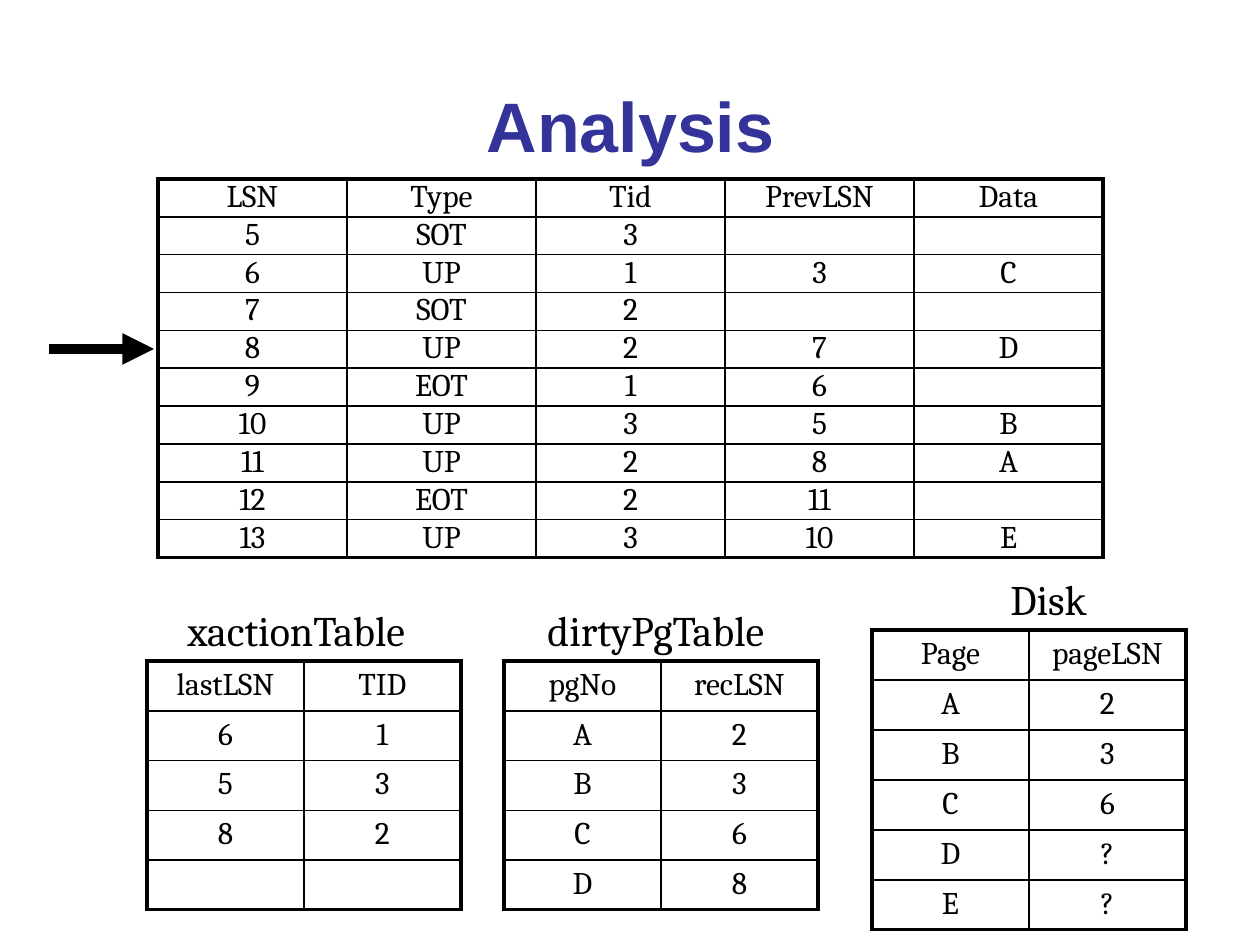
import lxml.etree
import pptx
import pptx.dml.color
import pptx.enum.shapes
import pptx.enum.text
import pptx.oxml
import pptx.oxml.ns
import pptx.util

SCALE = 914400 / 126
HUES = {"ink": "000000", "title": "333399", "paper": "FFFFFF"}
THICK, THIN = 2.25, 1
SERIF = "Cambria"

LOG = [
    ["LSN", "Type", "Tid", "PrevLSN", "Data"],
    ["5", "SOT", "3", "", ""],
    ["6", "UP", "1", "3", "C"],
    ["7", "SOT", "2", "", ""],
    ["8", "UP", "2", "7", "D"],
    ["9", "EOT", "1", "6", ""],
    ["10", "UP", "3", "5", "B"],
    ["11", "UP", "2", "8", "A"],
    ["12", "EOT", "2", "11", ""],
    ["13", "UP", "3", "10", "E"],
]
XACTS = [["lastLSN", "TID"], ["6", "1"], ["5", "3"], ["8", "2"], ["", ""]]
DIRTY = [["pgNo", "recLSN"], ["A", "2"], ["B", "3"], ["C", "6"], ["D", "8"]]
DISK = [["Page", "pageLSN"], ["A", "2"], ["B", "3"], ["C", "6"],
        ["D", "?"], ["E", "?"]]


def px(num):
    return pptx.util.Emu(round(num * SCALE))


def rgb(name):
    return pptx.dml.color.RGBColor.from_string(HUES[name])


def sub(node, tag, **attrs):
    return lxml.etree.SubElement(node, pptx.oxml.ns.qn(tag), **attrs)


def add_run(para, text, size, face=SERIF, hue="ink", bold=False):
    run = para.add_run()
    run.text = text
    run.font.size = pptx.util.Pt(size)
    run.font.name = face
    run.font.bold = bold
    run.font.color.rgb = rgb(hue)


def add_title(slide, text):
    box = slide.shapes.add_textbox(px(95), px(57), px(1071), px(136))
    frame = box.text_frame
    frame.word_wrap = True
    frame.vertical_anchor = pptx.enum.text.MSO_ANCHOR.MIDDLE
    para = frame.paragraphs[0]
    para.alignment = pptx.enum.text.PP_ALIGN.CENTER
    add_run(para, text, 40, "Arial", "title", True)


def add_label(slide, text, left, top, width):
    box = slide.shapes.add_textbox(px(left), px(top), px(width), px(63))
    box.text_frame.word_wrap = False
    add_run(box.text_frame.paragraphs[0], text, 24)


def add_arrow(slide, left, right, y):
    line = slide.shapes.add_connector(
        pptx.enum.shapes.MSO_CONNECTOR.STRAIGHT,
        px(left), px(y), px(right), px(y))
    line.line.width = pptx.util.Pt(6)
    line.line.color.rgb = rgb("ink")
    sub(line.line._get_or_add_ln(), "a:tailEnd", type="triangle")
    sub(line._element.spPr, "a:effectLst")


def set_edge(cell, side, width):
    edge = sub(cell._tc.get_or_add_tcPr(), "a:ln" + side,
               w=str(pptx.util.Pt(width)))
    sub(sub(edge, "a:solidFill"), "a:srgbClr", val=HUES["ink"])


def fill_cell(cell, text, pads):
    """Set text, margins and paper; an empty cell keeps the text height."""
    cell.margin_left = cell.margin_right = px(pads[0])
    cell.margin_top = cell.margin_bottom = px(pads[1])
    cell.fill.solid()
    cell.fill.fore_color.rgb = rgb("paper")
    para = cell.text_frame.paragraphs[0]
    para.alignment = pptx.enum.text.PP_ALIGN.CENTER
    if text:
        add_run(para, text, 18)
    else:
        end = sub(para._p, "a:endParaRPr", sz="1800")
        sub(end, "a:latin", typeface=SERIF)


def add_grid(slide, data, left, top, wide, high, pads):
    """Draw a table with a thick frame and thin inner rules."""
    rows, cols = len(data), len(data[0])
    table = slide.shapes.add_table(
        rows, cols, px(left), px(top), px(wide * cols), px(high * rows)).table
    table.first_row = table.horz_banding = False
    for col in table.columns:
        col.width = px(wide)
    for r, line in enumerate(data):
        table.rows[r].height = px(high)
        for c, text in enumerate(line):
            cell = table.cell(r, c)
            outer = {"L": c == 0, "R": c == cols - 1,
                     "T": r == 0, "B": r == rows - 1}
            for side, edge in outer.items():
                set_edge(cell, side, THICK if edge else THIN)
            fill_cell(cell, text, pads)


def main():
    deck = pptx.Presentation()
    deck.slide_width, deck.slide_height = px(1260), px(945)
    slide = deck.slides.add_slide(deck.slide_layouts[6])
    add_title(slide, "Analysis")
    add_arrow(slide, 49, 154, 349)
    add_grid(slide, LOG, 158, 179, 189, 36, (6, 0))
    for name, data, left, top, high, shift, width in [
        ("xactionTable", XACTS, 147, 661, 49, 28, 244),
        ("dirtyPgTable", DIRTY, 504, 661, 49, 31, 244),
        ("Disk", DISK, 872, 630, 50, 126, 105),
    ]:
        add_grid(slide, data, left, top, 157, high, (13, 6))
        add_label(slide, name, left + shift, top - 63, width)
    deck.save("out.pptx")


if __name__ == "__main__":
    main()
